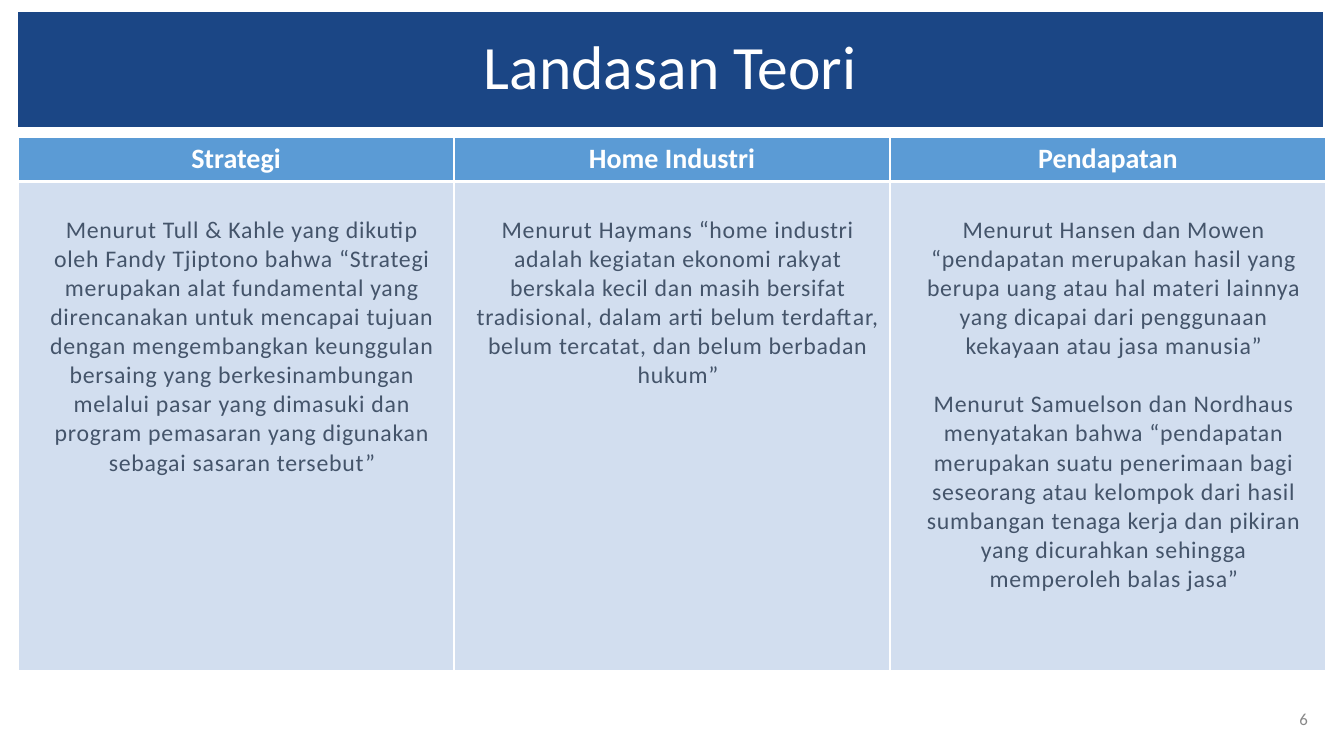
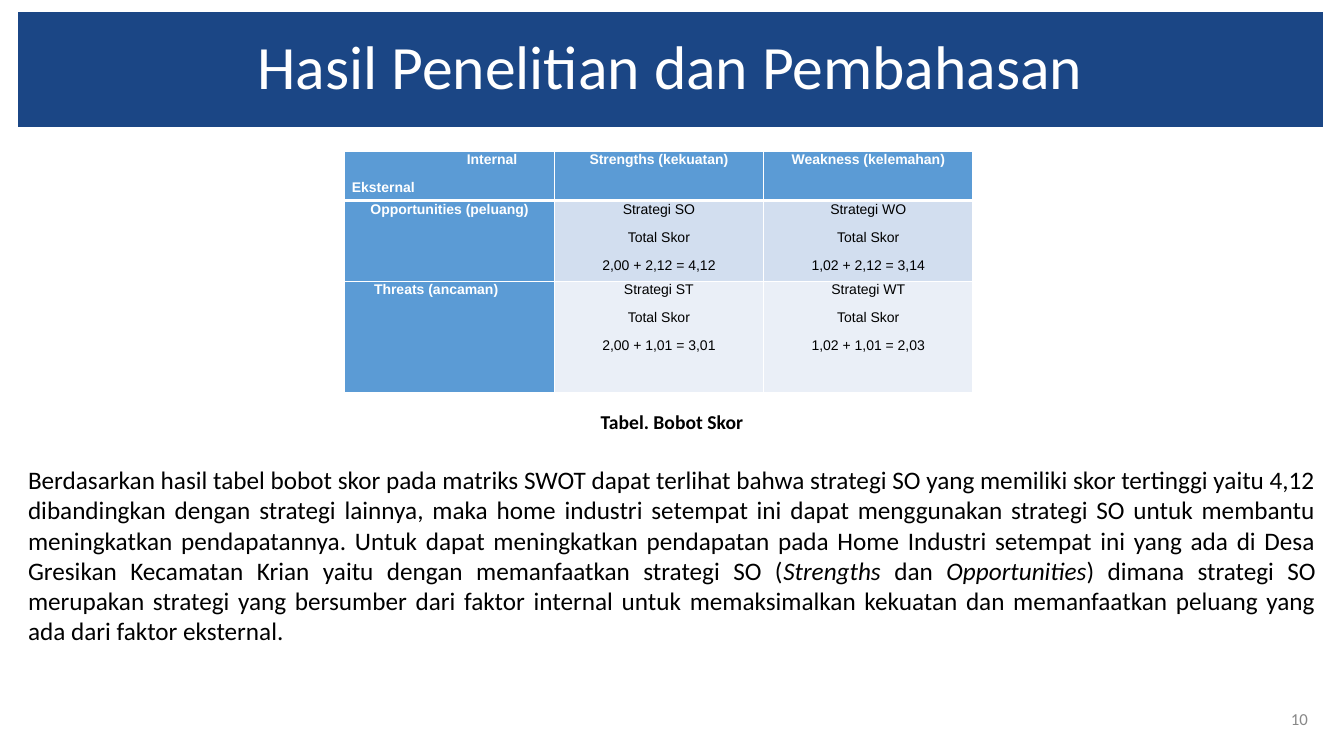
from dataclasses import dataclass

from lxml.etree import SubElement
from pptx import Presentation
from pptx.dml.color import RGBColor
from pptx.enum.shapes import MSO_SHAPE
from pptx.enum.text import MSO_ANCHOR as Anchor, PP_ALIGN as Align
from pptx.oxml.ns import qn
from pptx.util import Inches, Pt


@dataclass(frozen=True)
class Theme:
    body_font: str = "Calibri"
    matrix_font: str = "Arial"
    band: str = "1B4685"
    header: str = "5B9BD5"
    row_dark: str = "D2DEEF"
    row_light: str = "EAEFF7"
    slate: str = "44546A"
    number: str = "888888"
    white: str = "FFFFFF"
    black: str = "000000"
    title_size: float = 44
    heading_size: float = 20
    text_size: float = 18
    theory_size: float = 17
    caption_size: float = 14
    number_size: float = 12
    matrix_size: float = 10


THEME = Theme()
LEFT, CONTENT_WIDTH = 0.18, 12.97

THEORIES = [
    ("Strategi", [
        "Menurut Tull & Kahle yang dikutip oleh Fandy Tjiptono bahwa “Strategi merupakan alat "
        "fundamental yang direncanakan untuk mencapai tujuan dengan mengembangkan keunggulan "
        "bersaing yang berkesinambungan melalui pasar yang dimasuki dan program pemasaran yang "
        "digunakan sebagai sasaran tersebut”",
    ]),
    ("Home Industri", [
        "Menurut Haymans “home industri adalah kegiatan ekonomi rakyat berskala kecil dan masih "
        "bersifat tradisional, dalam arti belum terdaftar, belum tercatat, dan belum berbadan "
        "hukum”",
    ]),
    ("Pendapatan", [
        "Menurut Hansen dan Mowen “pendapatan merupakan hasil yang berupa uang atau hal materi "
        "lainnya yang dicapai dari penggunaan kekayaan atau jasa manusia”",
        "Menurut Samuelson dan Nordhaus menyatakan bahwa “pendapatan merupakan suatu penerimaan "
        "bagi seseorang atau kelompok dari hasil sumbangan tenaga kerja dan pikiran yang "
        "dicurahkan sehingga memperoleh balas jasa”",
    ]),
]

SWOT_ROWS = [
    (0.49, [["Internal", "Eksternal"], ["Strengths (kekuatan)"], ["Weakness (kelemahan)"]]),
    (0.8, [["Opportunities (peluang)"],
           ["Strategi SO", "Total Skor", "2,00 + 2,12 = 4,12"],
           ["Strategi WO", "Total Skor", "1,02 + 2,12 = 3,14"]]),
    (1.11, [["Threats (ancaman)"],
            ["Strategi ST", "Total Skor", "2,00 + 1,01 = 3,01"],
            ["Strategi WT", "Total Skor", "1,02 + 1,01 = 2,03"]]),
]
SWOT_INDENTS = {"Internal": 1.14, "Eksternal": 0, "Threats (ancaman)": 0.22}

CAPTION = "Tabel. Bobot Skor"
FINDING = [
    ("Berdasarkan hasil tabel bobot skor pada matriks SWOT dapat terlihat bahwa strategi SO yang "
     "memiliki skor tertinggi yaitu 4,12 dibandingkan dengan strategi lainnya, maka home industri "
     "setempat ini dapat menggunakan strategi SO untuk membantu meningkatkan pendapatannya. Untuk "
     "dapat meningkatkan pendapatan pada Home Industri setempat ini yang ada di Desa Gresikan "
     "Kecamatan Krian yaitu dengan memanfaatkan strategi SO (", False),
    ("Strengths", True),
    (" dan ", False),
    ("Opportunities", True),
    (") dimana strategi SO merupakan strategi yang bersumber dari faktor internal untuk "
     "memaksimalkan kekuatan dan memanfaatkan peluang yang ada dari faktor eksternal.", False),
]


def add_run(paragraph, text, size, color, font=THEME.body_font, bold=False, italic=False):
    run = paragraph.add_run()
    run.text = text
    run.font.name = font
    run.font.size = Pt(size)
    run.font.bold = bold
    run.font.italic = italic
    run.font.color.rgb = RGBColor.from_string(color)
    return run


def add_paragraph(frame, position, align, before=0):
    paragraph = frame.add_paragraph() if position else frame.paragraphs[0]
    paragraph.alignment = align
    if position and before:
        paragraph.space_before = Pt(before)
    return paragraph


def add_text_box(slide, left, top, width, height):
    box = slide.shapes.add_textbox(Inches(left), Inches(top), Inches(width), Inches(height))
    box.text_frame.word_wrap = True
    return box.text_frame


def add_framed_slide(presentation, title, number):
    slide = presentation.slides.add_slide(presentation.slide_layouts[6])
    band = slide.shapes.add_shape(
        MSO_SHAPE.RECTANGLE, Inches(LEFT), Inches(0.12), Inches(12.94), Inches(1.14))
    band.shadow.inherit = False
    band.fill.solid()
    band.fill.fore_color.rgb = RGBColor.from_string(THEME.band)
    band.line.fill.background()
    band.text_frame.word_wrap = True
    band.text_frame.vertical_anchor = Anchor.MIDDLE
    heading = add_paragraph(band.text_frame, 0, Align.CENTER)
    heading.line_spacing = 0.9
    add_run(heading, title, THEME.title_size, THEME.white)

    footer = add_text_box(slide, 12.5, 6.93, 0.57, 0.4)
    footer.vertical_anchor = Anchor.MIDDLE
    add_run(add_paragraph(footer, 0, Align.RIGHT), str(number), THEME.number_size, THEME.number)
    return slide


def add_grid(slide, left, top, width, row_heights, columns=3):
    table = slide.shapes.add_table(
        len(row_heights), columns, Inches(left), Inches(top),
        Inches(width), Inches(sum(row_heights))).table
    for column in table.columns:
        column.width = Inches(width / columns)
    for row, height in zip(table.rows, row_heights):
        row.height = Inches(height)
    return table


def style_cell(cell, row, fill):
    properties = cell._tc.get_or_add_tcPr()
    widths = {"lnL": 1, "lnR": 1, "lnT": 3 if row == 1 else 1, "lnB": 3 if row == 0 else 1}
    for side, width in widths.items():
        line = SubElement(properties, qn(f"a:{side}"), w=str(Pt(width)))
        solid = SubElement(line, qn("a:solidFill"))
        SubElement(solid, qn("a:srgbClr"), val=THEME.white)
    cell.fill.solid()
    cell.fill.fore_color.rgb = RGBColor.from_string(fill)


def build_theory_slide(presentation):
    slide = add_framed_slide(presentation, "Landasan Teori", 6)
    table = add_grid(slide, LEFT, 1.36, CONTENT_WIDTH, [0.44, 4.85])
    for column, (heading, quotes) in enumerate(THEORIES):
        header, body = table.cell(0, column), table.cell(1, column)
        style_cell(header, 0, THEME.header)
        add_run(add_paragraph(header.text_frame, 0, Align.CENTER),
                heading, THEME.heading_size, THEME.white, bold=True)
        style_cell(body, 1, THEME.row_dark)
        body.margin_left = Inches(0.22)
        body.margin_top = Inches(0.34)
        for position, quote in enumerate(quotes):
            paragraph = add_paragraph(body.text_frame, position, Align.CENTER, before=20.75)
            run = add_run(paragraph, quote, THEME.theory_size, THEME.slate)
            run.font._element.set("spc", "50")


def build_result_slide(presentation):
    slide = add_framed_slide(presentation, "Hasil Penelitian dan Pembahasan", 10)
    table = add_grid(slide, 3.42, 1.5, 6.23, [height for height, _ in SWOT_ROWS])
    row_fills = [THEME.header, THEME.row_dark, THEME.row_light]
    for row, (_, cells) in enumerate(SWOT_ROWS):
        for column, lines in enumerate(cells):
            cell = table.cell(row, column)
            is_header = row == 0 or column == 0
            style_cell(cell, row, THEME.header if is_header else row_fills[row])
            cell.margin_left = cell.margin_right = Inches(0.07)
            cell.margin_top = cell.margin_bottom = 0
            for position, text in enumerate(lines):
                indent = SWOT_INDENTS.get(text)
                align = Align.CENTER if indent is None else Align.LEFT
                paragraph = add_paragraph(cell.text_frame, position, align)
                paragraph.line_spacing = 1.07
                paragraph.space_after = Pt(8)
                if indent:
                    paragraph._p.get_or_add_pPr().set("marL", str(Inches(indent)))
                add_run(paragraph, text, THEME.matrix_size,
                        THEME.white if is_header else THEME.black,
                        font=THEME.matrix_font, bold=is_header)

    frame = add_text_box(slide, LEFT, 4.02, CONTENT_WIDTH, 2.52)
    add_run(add_paragraph(frame, 0, Align.CENTER),
            CAPTION, THEME.caption_size, THEME.black, bold=True)
    finding = add_paragraph(frame, 1, Align.JUSTIFY, before=22)
    for text, italic in FINDING:
        add_run(finding, text, THEME.text_size, THEME.black, italic=italic)


def main():
    presentation = Presentation()
    presentation.slide_width = Inches(13.33)
    presentation.slide_height = Inches(7.5)
    build_theory_slide(presentation)
    build_result_slide(presentation)
    presentation.save("out.pptx")


if __name__ == "__main__":
    main()
